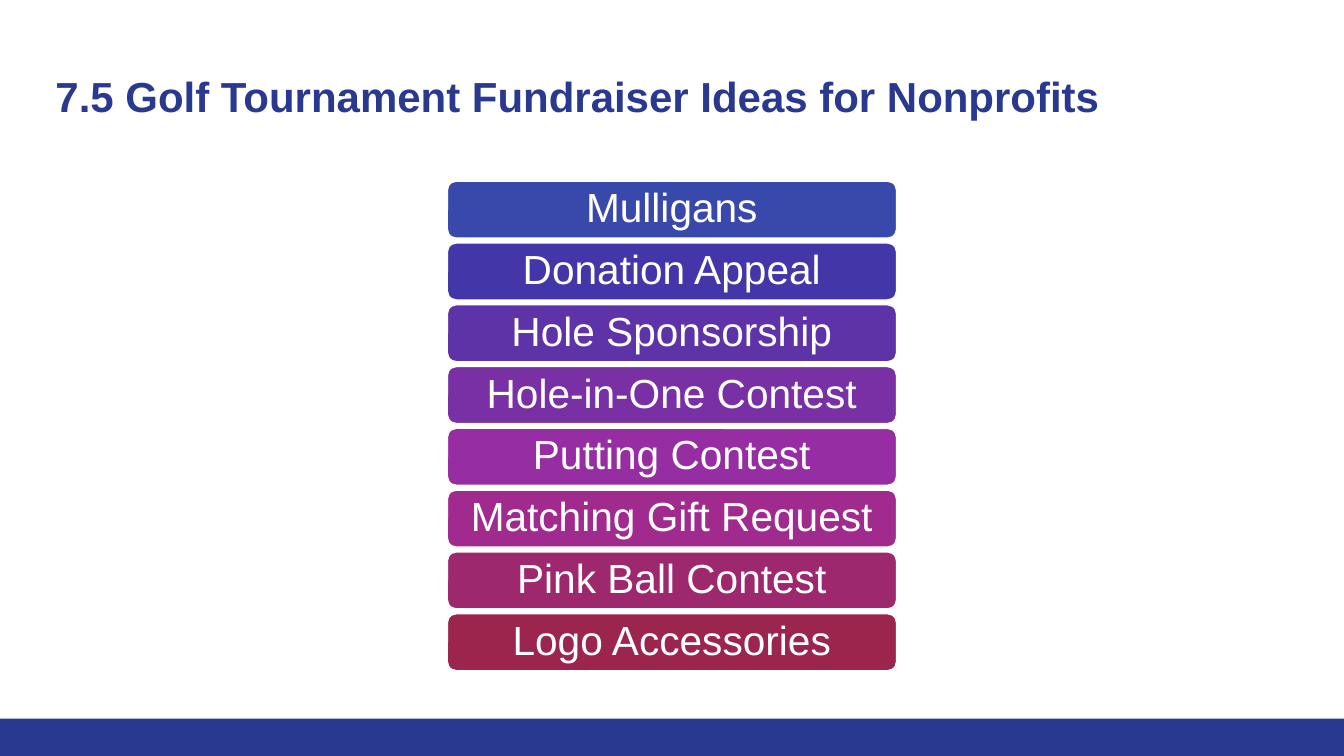
from pptx import Presentation
from pptx.dml.color import RGBColor
from pptx.enum import shapes, text
from pptx.util import Inches, Pt

NAVY = RGBColor(0x2A, 0x39, 0x90)
WHITE = RGBColor(0xFF, 0xFF, 0xFF)
IDEAS = [
    ("Mulligans", RGBColor(0x39, 0x49, 0xAB)),
    ("Donation Appeal", RGBColor(0x43, 0x36, 0xA9)),
    ("Hole Sponsorship", RGBColor(0x5E, 0x33, 0xA7)),
    ("Hole-in-One Contest", RGBColor(0x7A, 0x30, 0xA5)),
    ("Putting Contest", RGBColor(0x96, 0x2D, 0xA3)),
    ("Matching Gift Request", RGBColor(0xA1, 0x2A, 0x8F)),
    ("Pink Ball Contest", RGBColor(0x9E, 0x28, 0x6E)),
    ("Logo Accessories", RGBColor(0x9C, 0x25, 0x4D)),
]
IDEA_TOP, IDEA_PITCH = 1.79, 0.613


def set_all(target, values):
    for name, value in values.items():
        setattr(target, name, value)


def write(frame, words, margins, size, color, bold, align):
    """Fill a text frame with one formatted paragraph."""
    set_all(frame, margins)
    frame.word_wrap = True
    frame.auto_size = text.MSO_AUTO_SIZE.NONE
    paragraph = frame.paragraphs[0]
    paragraph.text = words
    paragraph.alignment = align
    font = paragraph.runs[0].font
    set_all(font, {"name": "Arial", "size": Pt(size), "bold": bold})
    font.color.rgb = color
    return paragraph


def add_block(slide, kind, left, top, width, height, fill):
    block = slide.shapes.add_shape(
        kind, Inches(left), Inches(top), Inches(width), Inches(height))
    block.shadow.inherit = False
    block.fill.solid()
    block.fill.fore_color.rgb = fill
    block.line.fill.background()
    return block


def add_title(slide, words):
    title = slide.shapes.title
    set_all(title, {"left": Inches(0.45), "top": Inches(0.6),
                    "width": Inches(12.42), "height": Inches(0.89)})
    margins = dict.fromkeys(
        ("margin_left", "margin_right", "margin_top", "margin_bottom"), Inches(0.1))
    heading = write(title.text_frame, words, margins, 30, NAVY, True,
                    text.PP_ALIGN.LEFT)
    heading.line_spacing = 1.0
    title.text_frame.vertical_anchor = text.MSO_ANCHOR.TOP


def add_idea(slide, top, words, fill):
    idea = add_block(slide, shapes.MSO_SHAPE.ROUNDED_RECTANGLE,
                     4.43, top, 4.47, 0.58, fill)
    idea.line.color.rgb = WHITE
    idea.line.width = Pt(2)
    margins = {"margin_left": Inches(0.12), "margin_right": Inches(0.12),
               "margin_top": Inches(0.06), "margin_bottom": Inches(0.06)}
    label = write(idea.text_frame, words, margins, 29, WHITE, False,
                  text.PP_ALIGN.CENTER)
    label.line_spacing = 0.9
    idea.text_frame.vertical_anchor = text.MSO_ANCHOR.MIDDLE


def main():
    deck = Presentation()
    deck.slide_width, deck.slide_height = Inches(13.33), Inches(7.5)
    slide = deck.slides.add_slide(deck.slide_layouts[5])
    add_block(slide, shapes.MSO_SHAPE.RECTANGLE, 0, 7.13, 13.33, 0.37, NAVY)
    add_title(slide, "7.5 Golf Tournament Fundraiser Ideas for Nonprofits")
    for row, (words, fill) in enumerate(IDEAS):
        add_idea(slide, IDEA_TOP + row * IDEA_PITCH, words, fill)
    deck.save("out.pptx")


if __name__ == "__main__":
    main()
